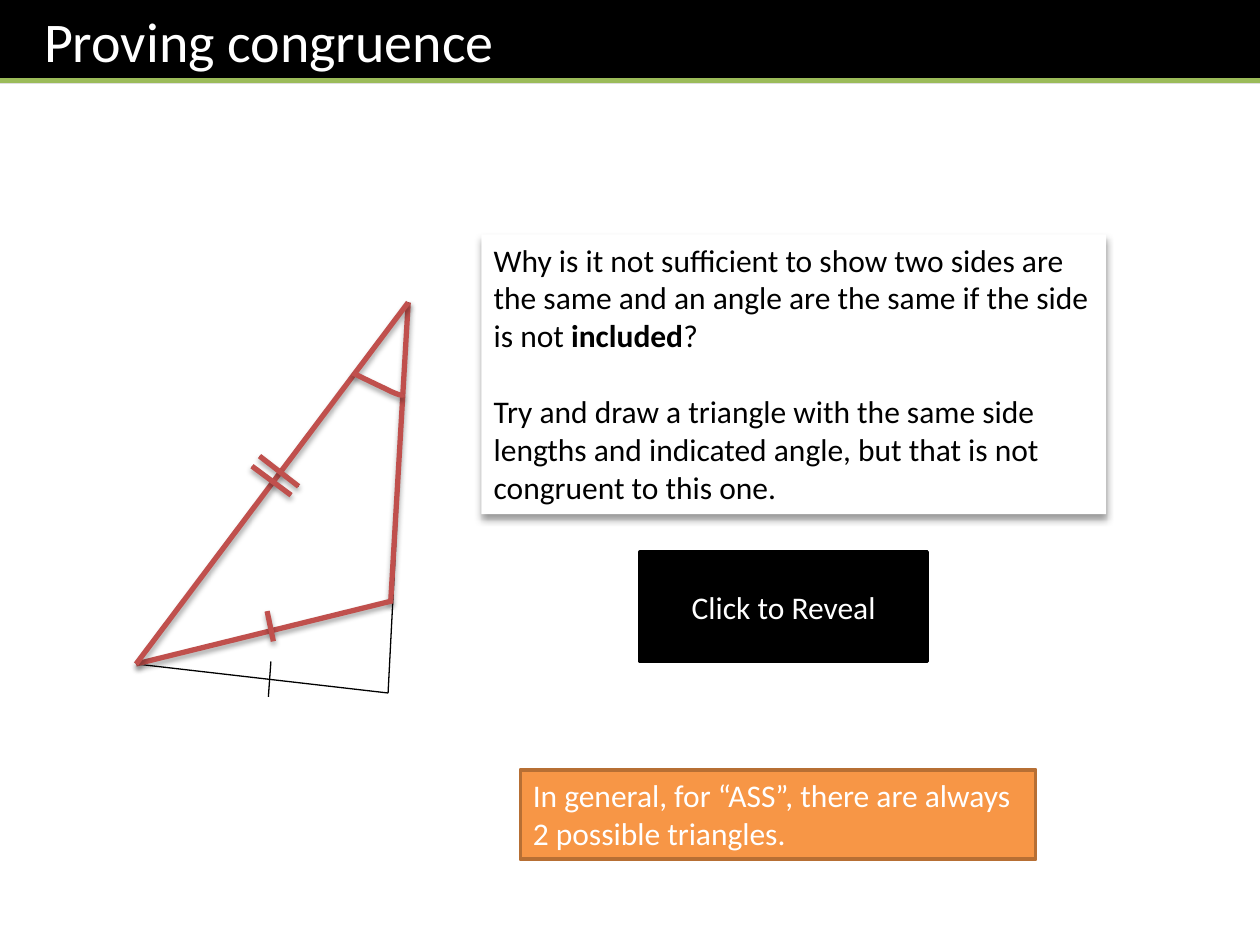
"""Build the 'Proving congruence' slide with its two overlaid triangles."""
import pptx
import pptx.util
import pptx.dml.color
import pptx.enum.shapes
import pptx.enum.text
import pptx.oxml.ns
import lxml.etree

INK, WHITE, RED = "000000", "FFFFFF", "C0504D"
APEX, LEFT = (3.24, 2.4), (1.08, 5.27)
SHARED_LINES = [(LEFT, APEX), ((2.06, 3.62), (2.37, 3.86)), ((2, 3.7), (2.31, 3.93))]
ARC = [
    ((2.8, 2.96), (2.92, 3.02), (3.05, 3.08), (3.11, 3.11)),
    ((3.11, 3.11), (3.18, 3.14), (3.19, 3.14), (3.2, 3.13)),
]
ARC_STEPS = 8
OUTER_LINES = [(APEX, (3.08, 5.5)), (LEFT, (3.08, 5.5)), ((2.15, 5.25), (2.13, 5.53))]
INNER_LINES = [(APEX, (3.1, 4.79)), (LEFT, (3.11, 4.77)), ((2.12, 4.85), (2.17, 5.09))]
LINE_SHADOW = {"alpha": 35, "blur": 3.1, "dist": 1.8}
BOX_SHADOW = {"alpha": 40, "blur": 4, "dist": 3}

TITLE = [[("Proving congruence", False)]]
QUESTION = [
    [
        ("Why is it not sufficient to show two sides are the same and an angle "
         "are the same if the side is not ", False),
        ("included", True),
        ("?", False),
    ],
    [("Try and draw a triangle with the same side lengths and indicated angle, "
      "but that is not congruent to this one.", False)],
]
REVEAL = [[("Click to Reveal", False)]]
RULE = [[("In general, for “ASS”, there are always 2 possible triangles.", False)]]


def rgb(value):
    """Return the colour for a hex string."""
    return pptx.dml.color.RGBColor.from_string(value)


def inches(*values):
    """Convert numbers in inches to whole EMU lengths."""
    return [pptx.util.Inches(v) for v in values]


def set_effect(sp, shadow=None):
    """Give a finished shape a downward shadow, or none at all."""
    tag = pptx.oxml.ns.qn
    effects = lxml.etree.SubElement(sp._element.spPr, tag("a:effectLst"))
    if shadow:
        outer = lxml.etree.SubElement(
            effects, tag("a:outerShdw"), dir="5400000", rotWithShape="0",
            blurRad=str(pptx.util.Pt(shadow["blur"])),
            dist=str(pptx.util.Pt(shadow["dist"])))
        color = lxml.etree.SubElement(outer, tag("a:srgbClr"), val=INK)
        lxml.etree.SubElement(color, tag("a:alpha"), val=str(shadow["alpha"] * 1000))


def set_line(sp, color, width):
    """Set the colour and width of an outline."""
    sp.line.color.rgb = rgb(color)
    sp.line.width = pptx.util.Pt(width)


def add_line(shapes, start, end, color, width, shadow=None):
    """Add a straight connector between two points."""
    straight = pptx.enum.shapes.MSO_CONNECTOR.STRAIGHT
    sp = shapes.add_connector(straight, *inches(*start, *end))
    set_line(sp, color, width)
    set_effect(sp, shadow)


def bezier(curve, t):
    """Return the point at t on a cubic curve."""
    weights = ((1 - t) ** 3, 3 * t * (1 - t) ** 2, 3 * t * t * (1 - t), t ** 3)
    return [sum(w * p[axis] for w, p in zip(weights, curve)) for axis in (0, 1)]


def add_triangle(s, lines, color, width, shadow=None):
    """Add a group with the sides, tick marks and angle arc of a triangle."""
    shapes = s.shapes.add_group_shape().shapes
    for start, end in lines + SHARED_LINES:
        add_line(shapes, start, end, color, width, shadow)
    points = [inches(*bezier(c, i / ARC_STEPS)) for c in ARC for i in range(1, ARC_STEPS + 1)]
    builder = shapes.build_freeform(*inches(*ARC[0][0]))
    builder.add_line_segments(points, close=False)
    sp = builder.convert_to_shape()
    sp.fill.background()
    set_line(sp, color, width)
    set_effect(sp, shadow)


def add_box(shapes, at, fill, paragraphs, color=WHITE, size=18, outline=None,
            shadow=None, centred=False, inset=0.1):
    """Add a filled rectangle holding paragraphs of (text, bold) runs."""
    sp = shapes.add_shape(pptx.enum.shapes.MSO_SHAPE.RECTANGLE, *inches(*at))
    sp.fill.solid()
    sp.fill.fore_color.rgb = rgb(fill)
    if outline:
        set_line(sp, outline, 2)
    else:
        sp.line.fill.background()
    set_effect(sp, shadow)
    tf = sp.text_frame
    tf.word_wrap = True
    tf.margin_left = pptx.util.Inches(inset)
    anchor, align = pptx.enum.text.MSO_ANCHOR, pptx.enum.text.PP_ALIGN
    tf.vertical_anchor = anchor.MIDDLE if centred else anchor.TOP
    for i, runs in enumerate(paragraphs):
        p = tf.add_paragraph() if i else tf.paragraphs[0]
        p.alignment = align.CENTER if centred else align.LEFT
        p.space_before = pptx.util.Pt(22 if i else 0)
        for text, bold in runs:
            r = p.add_run()
            r.text = text
            r.font.name, r.font.size, r.font.bold = "Calibri", pptx.util.Pt(size), bold
            r.font.color.rgb = rgb(color)


def main():
    """Assemble the slide and save it."""
    prs = pptx.Presentation()
    prs.slide_width, prs.slide_height = inches(10, 7.5)
    s = prs.slides.add_slide(prs.slide_layouts[6])
    header = s.shapes.add_group_shape().shapes
    add_box(header, (0, 0, 10, 0.66), INK, TITLE, size=32, inset=0.35)
    add_line(header, (0, 0.64), (10, 0.64), "9BBB59", 3)
    add_triangle(s, OUTER_LINES, INK, 0.75)
    add_box(s.shapes, (3.82, 1.86, 4.96, 2.22), WHITE, QUESTION, color=INK, shadow=BOX_SHADOW)
    add_triangle(s, INNER_LINES, RED, 3, LINE_SHADOW)
    add_box(s.shapes, (5.08, 4.38, 2.28, 0.87), INK, REVEAL, outline=INK, centred=True)
    add_box(s.shapes, (4.13, 6.11, 4.09, 0.71), "F79646", RULE, outline="B76F34")
    prs.save("out.pptx")


if __name__ == "__main__":
    main()
